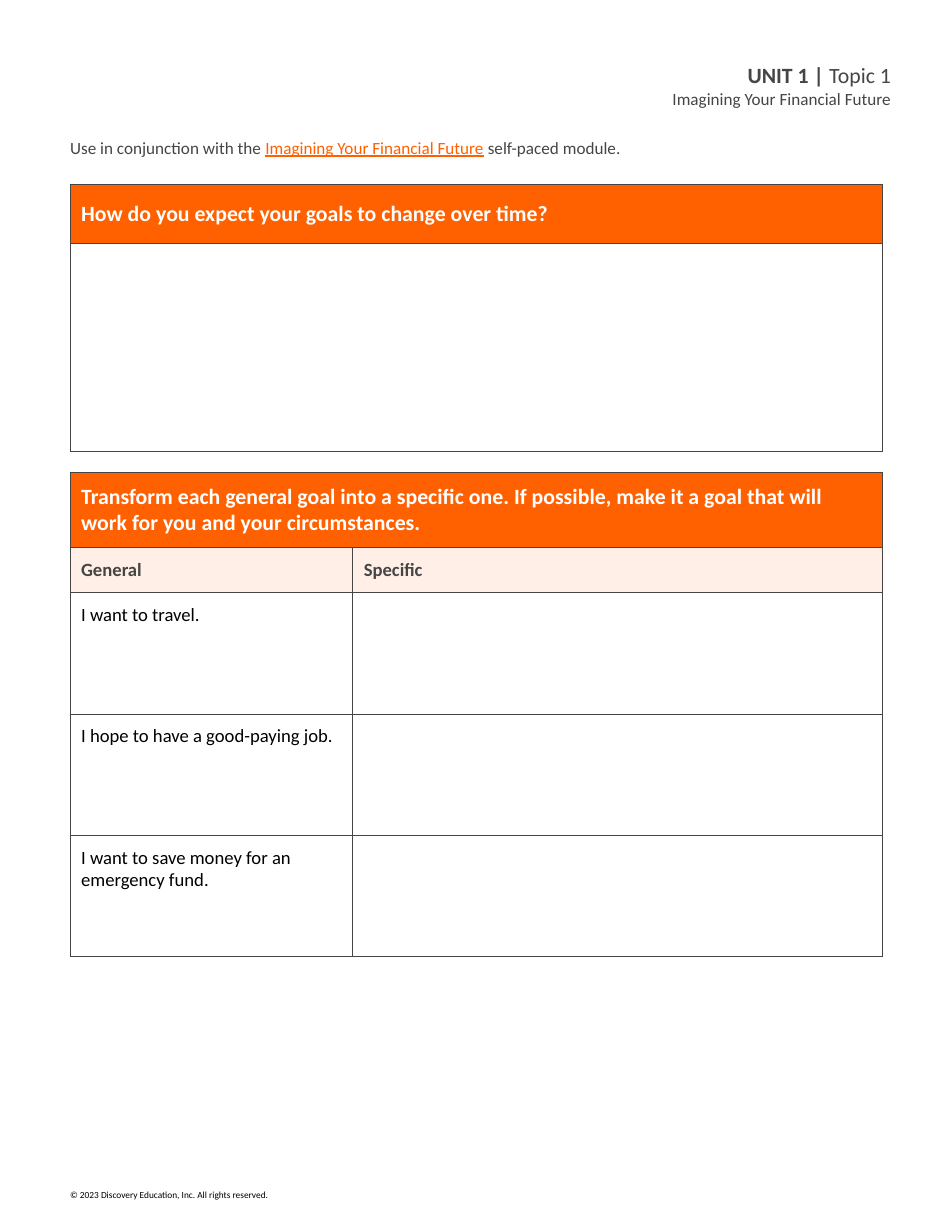
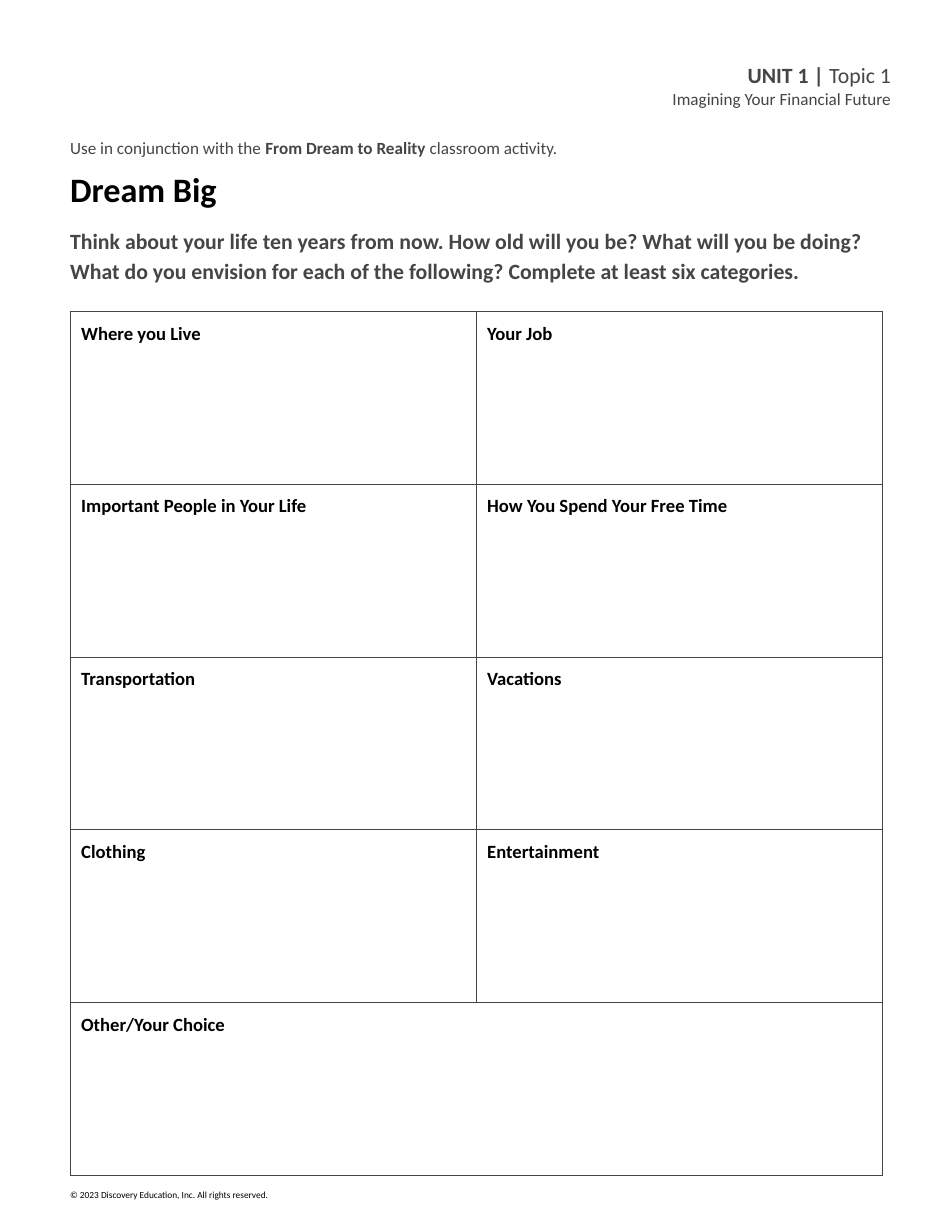
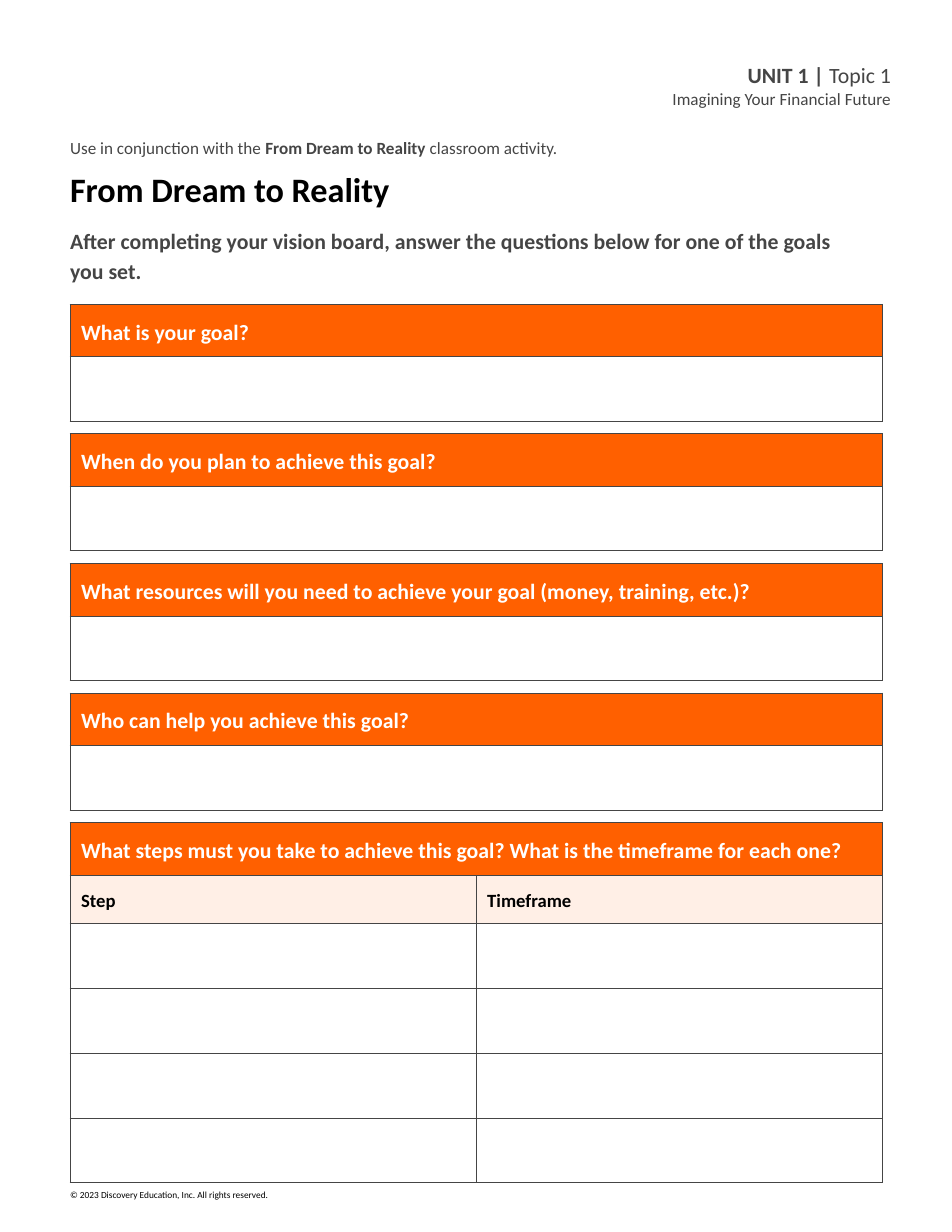
from pptx import Presentation
from pptx.dml.color import RGBColor
from pptx.enum.text import MSO_ANCHOR, MSO_AUTO_SIZE, PP_ALIGN
from pptx.oxml import parse_xml
from pptx.oxml.ns import nsdecls
from pptx.util import Cm, Pt

FONT = "Calibri"
ORANGE = "FF6000"
PEACH = "FFEFE6"
GRAY = "454545"
WHITE = "FFFFFF"
BLACK = "000000"
LEFT = 1.59
WIDTH = 18.42
HALVES = [WIDTH / 2, WIDTH / 2]
PADDING = 0.25
TITLE_ONLY, BLANK = 5, 6


def color(code):
    return RGBColor.from_string(code)


def add_span(para, text, size, code=GRAY, bold=False, underline=False):
    span = para.add_run()
    span.text = text
    span.font.name = FONT
    span.font.size = Pt(size)
    span.font.bold = bold
    span.font.underline = underline
    span.font.color.rgb = color(code)


def format_frame(frame, anchor=MSO_ANCHOR.TOP):
    frame.word_wrap = True
    frame.auto_size = MSO_AUTO_SIZE.NONE
    frame.vertical_anchor = anchor
    frame.margin_left = frame.margin_top = 0
    frame.margin_right = frame.margin_bottom = 0


def add_box(page, left, top, width, height, anchor=MSO_ANCHOR.TOP):
    box = page.shapes.add_textbox(Cm(left), Cm(top), Cm(width), Cm(height))
    format_frame(box.text_frame, anchor)
    return box.text_frame


def add_header_and_footer(page):
    frame = add_box(page, 9.98, 1.4, 10.23, 1.07, MSO_ANCHOR.MIDDLE)
    unit = frame.paragraphs[0]
    add_span(unit, "UNIT 1 | ", 14, bold=True)
    add_span(unit, "Topic 1", 14)
    topic = frame.add_paragraph()
    add_span(topic, "Imagining Your Financial Future", 11)
    for para in (unit, topic):
        para.alignment = PP_ALIGN.RIGHT

    footer = add_box(page, LEFT, 26.92, 8.64, 0.25).paragraphs[0]
    footer.line_spacing = 1.15
    add_span(footer, "© 2023 Discovery Education, Inc. All rights reserved.", 6, BLACK)


def add_usage_note(page, name, kind, **emphasis):
    para = add_box(page, LEFT, 3.05, WIDTH, 0.64).paragraphs[0]
    para.line_spacing = 1.15
    add_span(para, "Use in conjunction with the ", 11)
    add_span(para, name, 11, **emphasis)
    add_span(para, f" {kind}.", 11)


def set_title(page, text):
    title = page.shapes.title
    title.left, title.top = Cm(LEFT), Cm(3.81)
    title.width, title.height = Cm(WIDTH), Cm(0.91)
    format_frame(title.text_frame)
    para = title.text_frame.paragraphs[0]
    para.alignment = PP_ALIGN.LEFT
    add_span(para, text, 22, BLACK, bold=True)


def add_instruction(page, text, width=WIDTH):
    para = add_box(page, LEFT, 5.08, width, 1.65).paragraphs[0]
    para.line_spacing = 1.15
    add_span(para, text, 14, bold=True)


def add_borders(cell):
    properties = cell._tc.get_or_add_tcPr()
    for side in ("lnL", "lnR", "lnT", "lnB"):
        properties.append(parse_xml(
            f'<a:{side} {nsdecls("a")} w="{Pt(0.75)}"><a:solidFill>'
            f'<a:srgbClr val="{GRAY}"/></a:solidFill></a:{side}>'))


def add_grid(page, top, columns, rows):
    frame = page.shapes.add_table(len(rows), len(columns), Cm(LEFT), Cm(top),
                                  Cm(sum(columns)), Cm(sum(rows)))
    grid = frame.table
    grid.first_row = grid.horz_banding = False
    for column, width in zip(grid.columns, columns):
        column.width = Cm(width)
    for row, height in zip(grid.rows, rows):
        row.height = Cm(height)
    for cell in grid.iter_cells():
        cell.margin_left = cell.margin_right = Cm(PADDING)
        cell.margin_top = cell.margin_bottom = Cm(PADDING)
        add_borders(cell)
        cell.fill.background()
    return grid


def fill_cell(cell, text, size=12, code=BLACK, bold=True, fill=None, spacing=1.0):
    para = cell.text_frame.paragraphs[0]
    para.line_spacing = spacing
    add_span(para, text, size, code, bold)
    if fill:
        cell.fill.solid()
        cell.fill.fore_color.rgb = color(fill)


def add_question(page, top, question, columns, rows, spacing=1.0):
    grid = add_grid(page, top, columns, rows)
    heading = grid.cell(0, 0)
    if len(columns) > 1:
        heading.merge(grid.cell(0, len(columns) - 1))
    heading.vertical_anchor = MSO_ANCHOR.MIDDLE
    fill_cell(heading, question, 14, WHITE, fill=ORANGE, spacing=spacing)
    return grid


def add_page(deck, layout):
    page = deck.slides.add_slide(deck.slide_layouts[layout])
    add_header_and_footer(page)
    return page


def build_goals_page(deck):
    page = add_page(deck, BLANK)
    add_usage_note(page, "Imagining Your Financial Future", "self-paced module",
                   code=ORANGE, underline=True)
    add_question(page, 4.18, "How do you expect your goals to change over time?",
                 [WIDTH], [1.34, 4.73])
    goals = ["I want to travel.", "I hope to have a good-paying job.",
             "I want to save money for an emergency fund."]
    grid = add_question(
        page, 10.72,
        "Transform each general goal into a specific one. If possible, "
        "make it a goal that will work for you and your circumstances.",
        [6.41, WIDTH - 6.41], [1.67, 1.02] + [2.75] * len(goals))
    for column, label in enumerate(["General", "Specific"]):
        fill_cell(grid.cell(1, column), label, code=GRAY, fill=PEACH)
    for row, goal in enumerate(goals, start=2):
        fill_cell(grid.cell(row, 0), goal, bold=False)


def build_dream_page(deck):
    page = add_page(deck, TITLE_ONLY)
    add_usage_note(page, "From Dream to Reality", "classroom activity", bold=True)
    set_title(page, "Dream Big")
    add_instruction(
        page, "Think about your life ten years from now. How old will you be? "
        "What will you be doing? What do you envision for each of the following? "
        "Complete at least six categories.")
    categories = ["Where you Live", "Your Job", "Important People in Your Life",
                  "How You Spend Your Free Time", "Transportation", "Vacations",
                  "Clothing", "Entertainment", "Other/Your Choice"]
    grid = add_grid(page, 7.06, HALVES, [3.92] * 5)
    grid.cell(4, 0).merge(grid.cell(4, 1))
    for index, category in enumerate(categories):
        fill_cell(grid.cell(*divmod(index, 2)), category)


def build_reality_page(deck):
    page = add_page(deck, TITLE_ONLY)
    add_usage_note(page, "From Dream to Reality", "classroom activity", bold=True)
    set_title(page, "From Dream to Reality")
    add_instruction(page, "After completing your vision board, answer the questions "
                    "below for one of the goals you set.", 17.86)
    questions = ["What is your goal?", "When do you plan to achieve this goal?",
                 "What resources will you need to achieve your goal (money, training, etc.)?",
                 "Who can help you achieve this goal?"]
    first, step = 6.9, 2.94
    for index, question in enumerate(questions):
        add_question(page, first + index * step, question, [WIDTH], [1.19, 1.46], 1.15)
    grid = add_question(
        page, first + len(questions) * step,
        "What steps must you take to achieve this goal? What is the timeframe for each one?",
        HALVES, [1.19, 1.09] + [1.47] * 4, 1.15)
    for column, label in enumerate(["Step", "Timeframe"]):
        fill_cell(grid.cell(1, column), label, fill=PEACH, spacing=1.15)


def main():
    deck = Presentation()
    deck.slide_width, deck.slide_height = Cm(21.59), Cm(27.94)
    build_goals_page(deck)
    build_dream_page(deck)
    build_reality_page(deck)
    deck.save("out.pptx")


if __name__ == "__main__":
    main()
